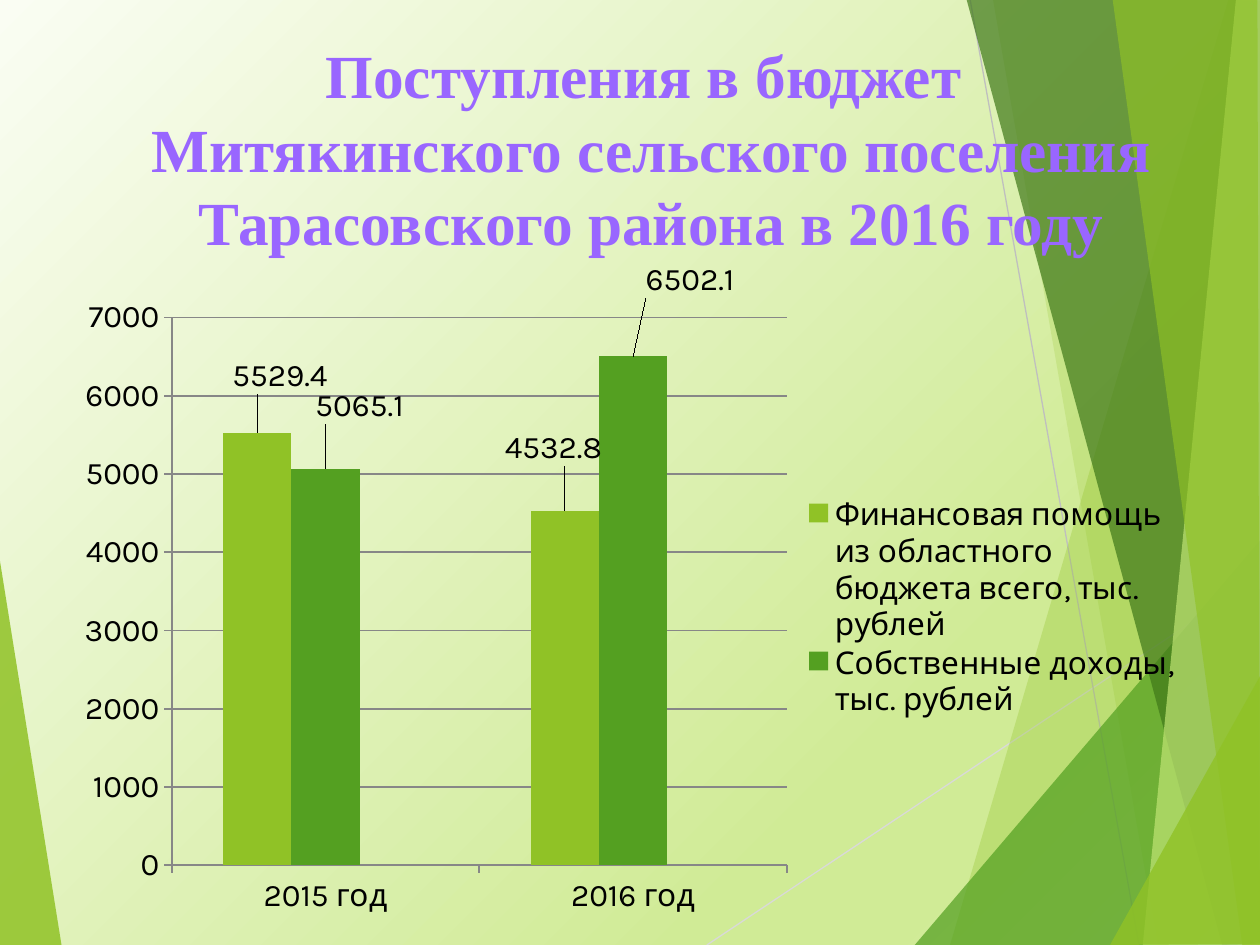
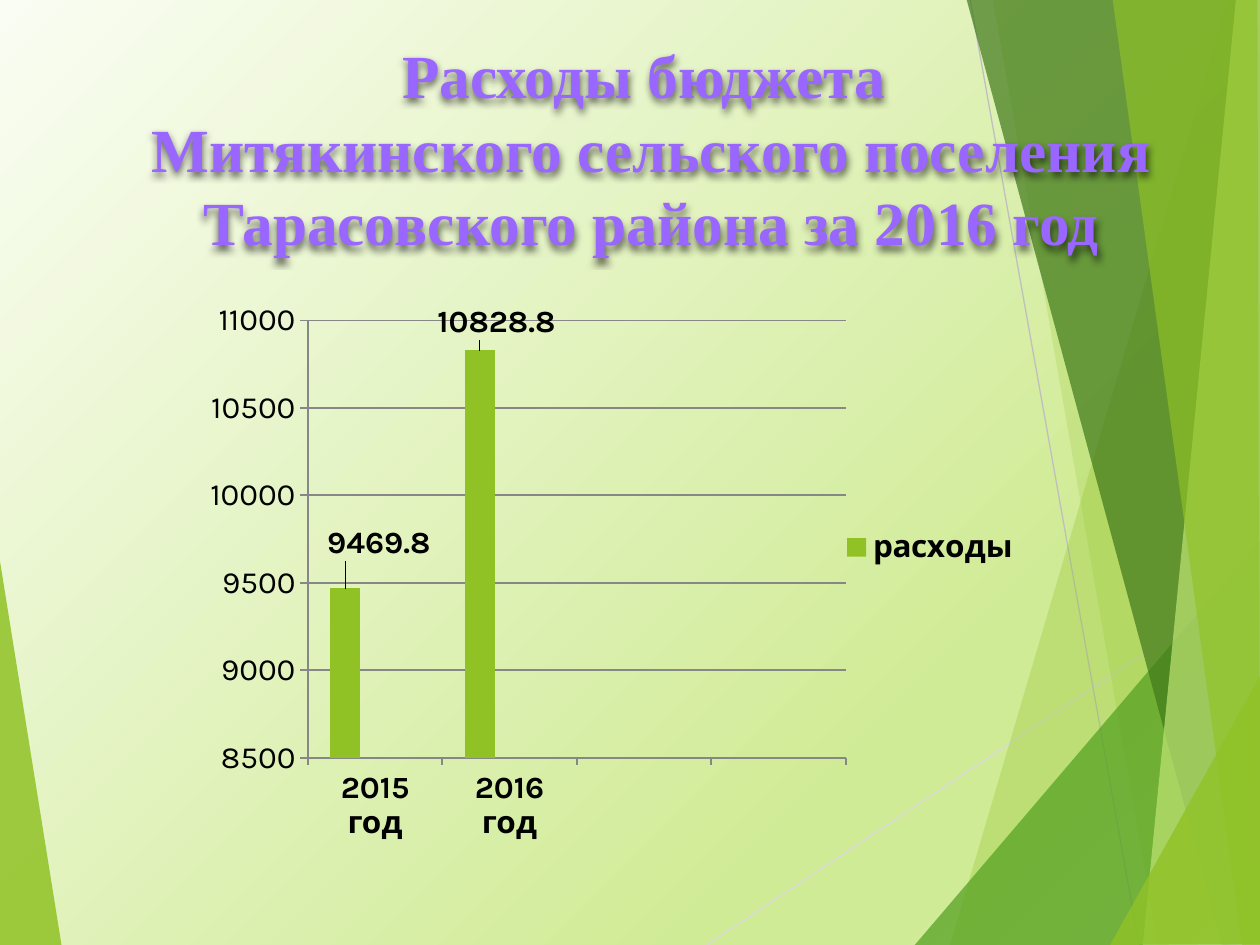
"""Build two slides on the income and spending of a rural settlement budget."""
from dataclasses import dataclass

from lxml.etree import SubElement
from pptx import Presentation
from pptx.chart.data import CategoryChartData
from pptx.dml.color import RGBColor
from pptx.enum.chart import XL_CHART_TYPE, XL_LABEL_POSITION, XL_LEGEND_POSITION, XL_TICK_MARK
from pptx.enum.shapes import MSO_CONNECTOR
from pptx.enum.text import MSO_ANCHOR, PP_ALIGN
from pptx.oxml import parse_xml
from pptx.oxml.ns import nsdecls, qn
from pptx.util import Inches, Pt


@dataclass(frozen=True)
class Theme:
    lime: str = "90C226"
    green: str = "54A021"
    forest: str = "3F7819"
    pale: str = "C0E474"
    gold: str = "E6B91E"
    title: str = "9966FF"
    ink: str = "000000"
    axis: str = "878787"
    title_font: str = "Times New Roman"
    chart_font: str = "Karla"
    title_size: int = 35
    chart_size: int = 18
    line_width: float = 0.75
    axis_width: float = 1


THEME = Theme()
BACKGROUND = [(0, "FAFDF3"), (74, "D0EB96"), (83, "D0EB96"), (100, "DFF1B9")]
RAYS = [((5.61, 7.5), (10.01, 4.57), "D9D9D9"), ((7.7, 0), (9.04, 7.5), "BFBFBF")]
LEFT_FACET = (THEME.lime, 85, [(-0.01, 4.39), (0.49, 7.51), (-0.01, 7.5)])
RIGHT_FACETS = [
    (THEME.lime, 30, [(9.75, 0), (7.54, 7.5), (10.02, 7.51), (10.01, 0.01)]),
    (THEME.lime, 20, [(7.88, -0.01), (9.19, 7.5), (10.01, 7.5), (10.01, -0.01)]),
    (THEME.green, 72, [(7.26, 7.5), (10, 4.29), (10.01, 7.5)]),
    (THEME.forest, 70, [(7.67, -0.01), (9.7, 7.5), (10.01, 7.49), (10.01, -0.01)]),
    (THEME.pale, 70, [(9.81, -0.01), (9.07, 7.5), (10.01, 7.5), (10, -0.01)]),
    (THEME.lime, 65, [(8.83, -0.01), (9.86, 7.5), (10, 7.5), (9.98, -0.01)]),
    (THEME.lime, 80, [(8.81, 7.5), (10.01, 5.35), (10.01, 7.49)]),
]
SERIES_COLOURS = [THEME.lime, THEME.green, THEME.gold]
SLIDES = [
    {
        "title": ["Поступления в бюджет ",
                  "Митякинского сельского поселения Тарасовского района в 2016 году"],
        "title_shadow": False,
        "frame": (0.46, 2.08, 9.04, 5.26),
        "categories": ["2015 год", "2016 год"],
        "series": [
            ("Финансовая помощь из областного бюджета всего, тыс. рублей", [5529.4, 4532.8]),
            ("Собственные доходы, тыс. рублей", [5065.1, 6502.1]),
            ("Series 3", [None, None]),
        ],
        "label_shifts": [[(0.02, -0.05), (-0.01, -0.06)], [(0.03, -0.06), (0.05, -0.08)]],
        "scale": (0, 7000, 1000),
        "plot": (0.1, 0.08, 0.54, 0.83),
        "legend": (0.65, 0.35, 0.34, 0.34),
        "bold": False,
    },
    {
        "title": ["Расходы бюджета ",
                  "Митякинского сельского поселения Тарасовского района за 2016 год"],
        "title_shadow": True,
        "frame": (1.51, 2.24, 6.67, 4.44),
        "categories": ["2015 год", "2016 год", "", ""],
        "series": [
            ("расходы", [9469.8, 10828.8, None, None]),
            ("Series 2", [None] * 4),
            ("Series 3", [None] * 4),
        ],
        "label_shifts": [[(0.04, -0.04), (0.02, -0.01)]],
        "scale": (8500, 11000, 500),
        "plot": (0.14, 0.07, 0.64, 0.8),
        "legend": (0.77, 0.44, 0.22, 0.09),
        "bold": True,
    },
]


def colour(value):
    return RGBColor.from_string(value)


def paint_background(page):
    fill = page.background.fill
    fill.gradient()
    gradient = page.background._cSld.find(".//" + qn("a:gradFill"))
    stops = gradient.find(qn("a:gsLst"))
    for stop in list(stops):
        stops.remove(stop)
    for position, value in BACKGROUND:
        stop = SubElement(stops, qn("a:gs"), pos=str(position * 1000))
        SubElement(stop, qn("a:srgbClr"), val=value)
    gradient.find(qn("a:lin")).set("ang", str(45 * 60000))


def add_facet(page, value, opacity, points):
    corners = [(Inches(x), Inches(y)) for x, y in points]
    builder = page.shapes.build_freeform(*corners[0])
    builder.add_line_segments(corners[1:], close=True)
    facet = builder.convert_to_shape()
    facet.shadow.inherit = False
    facet.fill.solid()
    facet.fill.fore_color.rgb = colour(value)
    facet.line.fill.background()
    shade = facet._element.spPr.find(".//" + qn("a:srgbClr"))
    SubElement(shade, qn("a:alpha"), val=str(opacity * 1000))


def add_ray(page, start, end, value):
    ends = [Inches(length) for length in start + end]
    ray = page.shapes.add_connector(MSO_CONNECTOR.STRAIGHT, *ends)
    ray.line.color.rgb = colour(value)
    ray.line.width = Pt(THEME.line_width)
    SubElement(ray._element.spPr, qn("a:effectLst"))


def add_title(page, lines, shadow):
    box = page.shapes.add_textbox(Inches(0.67), Inches(0.25), Inches(9), Inches(1.25))
    frame = box.text_frame
    frame.word_wrap = True
    frame.vertical_anchor = MSO_ANCHOR.TOP
    for index, line in enumerate(lines):
        para = frame.add_paragraph() if index else frame.paragraphs[0]
        para.text = line
        para.alignment = PP_ALIGN.CENTER
        para.font.name = THEME.title_font
        para.font.size = Pt(THEME.title_size)
        para.font.bold = True
        para.font.color.rgb = colour(THEME.title)
    if shadow:
        effects = SubElement(box._element.spPr, qn("a:effectLst"))
        outer = SubElement(effects, qn("a:outerShdw"), blurRad="50800", dist="25400", dir="5400000")
        shade = SubElement(outer, qn("a:srgbClr"), val=THEME.ink)
        SubElement(shade, qn("a:alpha"), val="60000")


def manual_layout(**settings):
    parts = "".join(f'<c:{name} val="{value}"/>' for name, value in settings.items())
    return parse_xml(f'<c:layout {nsdecls("c")}><c:manualLayout>{parts}</c:manualLayout></c:layout>')


def fixed_layout(area, **target):
    return manual_layout(**target, xMode="edge", yMode="edge", **dict(zip("xywh", area)))


def style_axis(axis):
    axis.major_tick_mark = XL_TICK_MARK.OUTSIDE
    axis.minor_tick_mark = XL_TICK_MARK.NONE
    axis.format.line.color.rgb = colour(THEME.axis)
    axis.format.line.width = Pt(THEME.axis_width)


def style_font(font, bold):
    font.name = THEME.chart_font
    font.size = Pt(THEME.chart_size)
    font.color.rgb = colour(THEME.ink)
    font.bold = bold


def style_axes(chart, content):
    low, high, step = content["scale"]
    values = chart.value_axis
    values.minimum_scale, values.maximum_scale, values.major_unit = low, high, step
    values.has_major_gridlines = True
    grid = values.major_gridlines.format.line
    grid.color.rgb = colour(THEME.axis)
    grid.width = Pt(THEME.axis_width)
    style_axis(values)
    style_axis(chart.category_axis)
    style_font(values.tick_labels.font, False)
    style_font(chart.category_axis.tick_labels.font, content["bold"])


def style_legend(chart, content):
    chart.has_legend = True
    legend = chart.legend
    legend.position = XL_LEGEND_POSITION.RIGHT
    legend.include_in_layout = False
    style_font(legend.font, content["bold"])
    for old in legend._element.findall(qn("c:layout")):
        legend._element.remove(old)
    extras = [
        parse_xml(f'<c:legendEntry {nsdecls("c")}><c:idx val="{index}"/><c:delete val="1"/></c:legendEntry>')
        for index in range(len(content["label_shifts"]), len(content["series"]))
    ]
    extras.append(fixed_layout(content["legend"]))
    for offset, extra in enumerate(extras, 1):
        legend._element.insert(offset, extra)


def style_series(plot, content):
    for series, value in zip(plot.series, SERIES_COLOURS):
        series.format.fill.solid()
        series.format.fill.fore_color.rgb = colour(value)
        series.invert_if_negative = False
    for series, shifts in zip(plot.series, content["label_shifts"]):
        for index, (across, down) in enumerate(shifts):
            label = series.points[index].data_label
            style_font(label.font, content["bold"])
            label.position = XL_LABEL_POSITION.OUTSIDE_END
            element = series._element.findall(".//" + qn("c:dLbl"))[index]
            element.insert(1, manual_layout(x=across, y=down))


def add_budget_chart(page, content):
    data = CategoryChartData(number_format="General")
    data.categories = content["categories"]
    for name, values in content["series"]:
        data.add_series(name, values)
    area = [Inches(length) for length in content["frame"]]
    chart = page.shapes.add_chart(XL_CHART_TYPE.COLUMN_CLUSTERED, *area, data).chart
    chart.has_title = False
    style_font(chart.font, False)
    plot = chart.plots[0]
    plot.gap_width, plot.overlap, plot.vary_by_categories = 150, 0, False
    style_axes(chart, content)
    style_legend(chart, content)
    style_series(plot, content)
    plot_area = chart._chartSpace.find(".//" + qn("c:plotArea"))
    for old in plot_area.findall(qn("c:layout")):
        plot_area.remove(old)
    plot_area.insert(0, fixed_layout(content["plot"], layoutTarget="inner"))


def add_page(deck, content):
    page = deck.slides.add_slide(deck.slide_layouts[6])
    paint_background(page)
    add_facet(page, *LEFT_FACET)
    for ray in RAYS:
        add_ray(page, *ray)
    for facet in RIGHT_FACETS:
        add_facet(page, *facet)
    add_title(page, content["title"], content["title_shadow"])
    add_budget_chart(page, content)


def main():
    deck = Presentation()
    deck.slide_width, deck.slide_height = Inches(10), Inches(7.5)
    for content in SLIDES:
        add_page(deck, content)
    deck.save("out.pptx")


if __name__ == "__main__":
    main()
